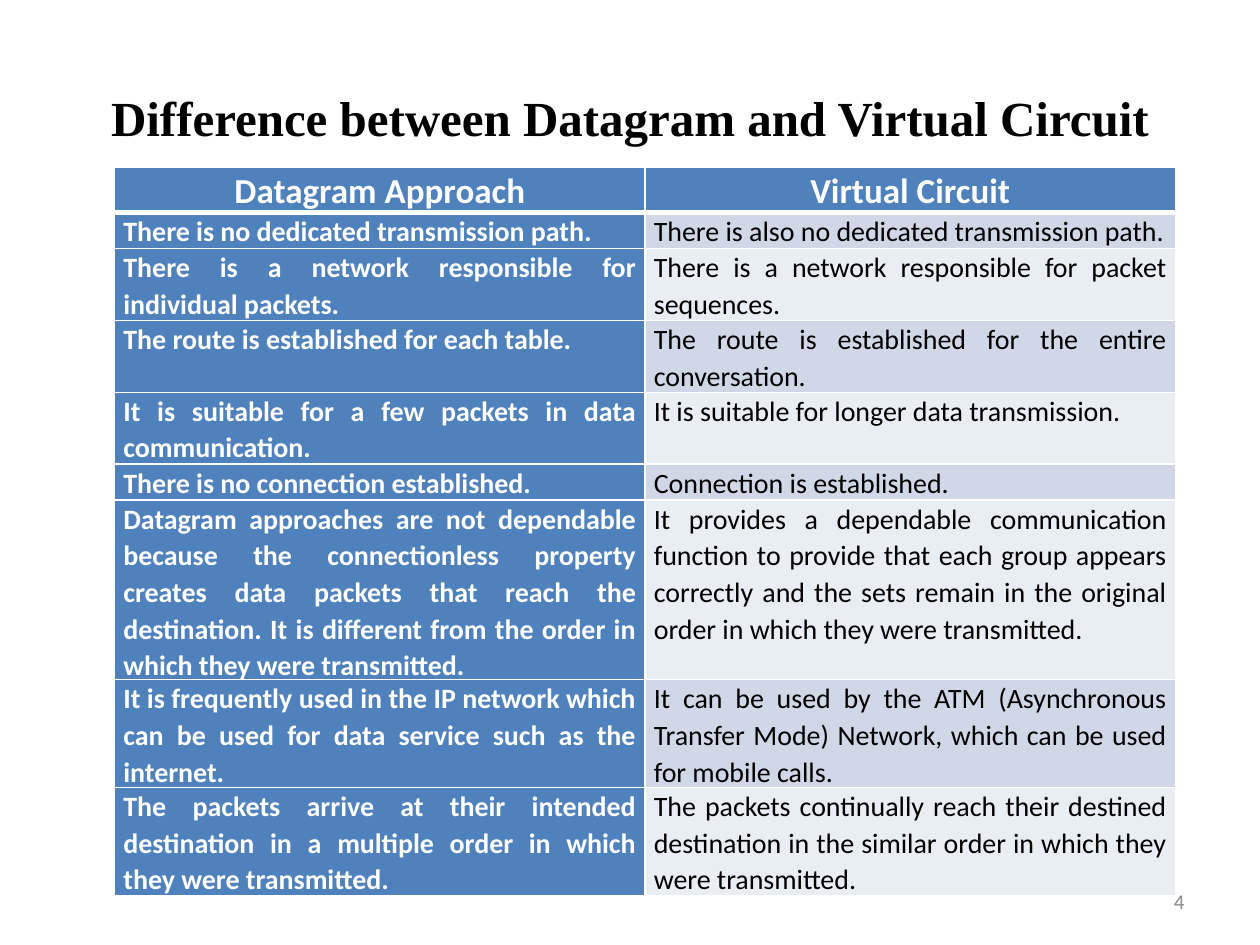
from lxml import etree
from pptx import Presentation
from pptx.dml.color import RGBColor
from pptx.enum.text import MSO_ANCHOR, PP_ALIGN
from pptx.oxml.ns import qn
from pptx.util import Inches, Pt

LEFT, CENTER, RIGHT, JUSTIFY = PP_ALIGN.LEFT, PP_ALIGN.CENTER, PP_ALIGN.RIGHT, PP_ALIGN.JUSTIFY
MIDDLE, TOP = MSO_ANCHOR.MIDDLE, MSO_ANCHOR.TOP

TITLE = "Difference between Datagram and Virtual Circuit"
PAGE = "4"
HEADER = ("Datagram Approach", "Virtual Circuit")
ROWS = [
    ("There is no dedicated transmission path.",
     "There is also no dedicated transmission path."),
    ("There is a network responsible for individual packets.",
     "There is a network responsible for packet sequences."),
    ("The route is established for each table.",
     "The route is established for the entire conversation."),
    ("It is suitable for a few packets in data communication.",
     "It is suitable for longer data transmission."),
    ("There is no connection established.",
     "Connection is established."),
    ("Datagram approaches are not dependable because the connectionless property creates "
     "data packets that reach the destination. It is different from the order in which "
     "they were transmitted.",
     "It provides a dependable communication function to provide that each group appears "
     "correctly and the sets remain in the original order in which they were transmitted."),
    ("It is frequently used in the IP network which can be used for data service such as "
     "the internet.",
     "It can be used by the ATM (Asynchronous Transfer Mode) Network, which can be used "
     "for mobile calls."),
    ("The packets arrive at their intended destination in a multiple order in which they "
     "were transmitted.",
     "The packets continually reach their destined destination in the similar order in "
     "which they were transmitted."),
]
ROW_HEIGHTS = (0.33, 0.27, 0.55, 0.55, 0.55, 0.27, 1.41, 0.84, 0.84)
COL_WIDTH = 4.21

THEME = {
    "accent": "4F81BD", "bands": ("D0D8E8", "E9EDF4"), "line": "FFFFFF",
    "title": {"name": "Times New Roman", "size": 28, "bold": True, "color": "000000"},
    "page": {"name": "Calibri", "size": 12, "bold": False, "color": "8C8C8C"},
    "header": {"name": "Calibri", "size": 20, "bold": True, "color": "FFFFFF"},
    "first": {"name": "Calibri", "size": 16, "bold": True, "color": "FFFFFF"},
    "body": {"name": "Calibri", "size": 16, "bold": False, "color": "000000"},
}
CELL_FORMAT = {"margin_left": Inches(0.07), "margin_right": Inches(0.07),
               "margin_top": 0, "margin_bottom": 0, "vertical_anchor": TOP}
CELL_SPACING = {"line_spacing": 1.07, "space_after": Pt(8)}


def set_attrs(obj, values):
    for name, value in values.items():
        setattr(obj, name, value)


def write(tf, text, style, align, **spacing):
    p = tf.paragraphs[0]
    set_attrs(p, {"alignment": align, **spacing})
    r = p.add_run()
    r.text = text
    font = THEME[style]
    set_attrs(r.font, {"name": font["name"], "size": Pt(font["size"]), "bold": font["bold"]})
    r.font.color.rgb = RGBColor.from_string(font["color"])


def add_text(s, box, text, style, align):
    tf = s.shapes.add_textbox(*map(Inches, box)).text_frame
    set_attrs(tf, {"word_wrap": True, "vertical_anchor": MIDDLE})
    write(tf, text, style, align)


def set_borders(cell, widths):
    tc_pr = cell._tc.get_or_add_tcPr()
    for side, width in widths.items():
        ln = etree.SubElement(tc_pr, qn(f"a:ln{side}"), w=str(Pt(width)))
        fill = etree.SubElement(ln, qn("a:solidFill"))
        etree.SubElement(fill, qn("a:srgbClr"), val=THEME["line"])


def add_comparison(s):
    rows = [HEADER, *ROWS]
    box = (0.91, 1.33, 2 * COL_WIDTH, sum(ROW_HEIGHTS))
    table = s.shapes.add_table(len(rows), 2, *map(Inches, box)).table
    for col in table.columns:
        col.width = Inches(COL_WIDTH)
    for i, (texts, height) in enumerate(zip(rows, ROW_HEIGHTS)):
        table.rows[i].height = Inches(height)
        for j, text in enumerate(texts):
            cell = table.cell(i, j)
            style = "header" if i == 0 else ("first", "body")[j]
            color = THEME["bands"][(i - 1) % 2] if style == "body" else THEME["accent"]
            set_attrs(cell, CELL_FORMAT)
            set_borders(cell, {"L": 1, "R": 1, "T": 3 if i == 1 else 1, "B": 3 if i == 0 else 1})
            cell.fill.solid()
            cell.fill.fore_color.rgb = RGBColor.from_string(color)
            write(cell.text_frame, text, style, JUSTIFY if i else CENTER, **CELL_SPACING)


def main():
    """Build the slide comparing datagram and virtual circuit networks."""
    prs = Presentation()
    set_attrs(prs, {"slide_width": Inches(10), "slide_height": Inches(7.5)})
    s = prs.slides.add_slide(prs.slide_layouts[6])
    add_text(s, (0.5, 0.3, 9, 1.25), TITLE, "title", CENTER)
    add_text(s, (7.17, 6.95, 2.33, 0.4), PAGE, "page", RIGHT)
    add_comparison(s)
    prs.save("out.pptx")


if __name__ == "__main__":
    main()
